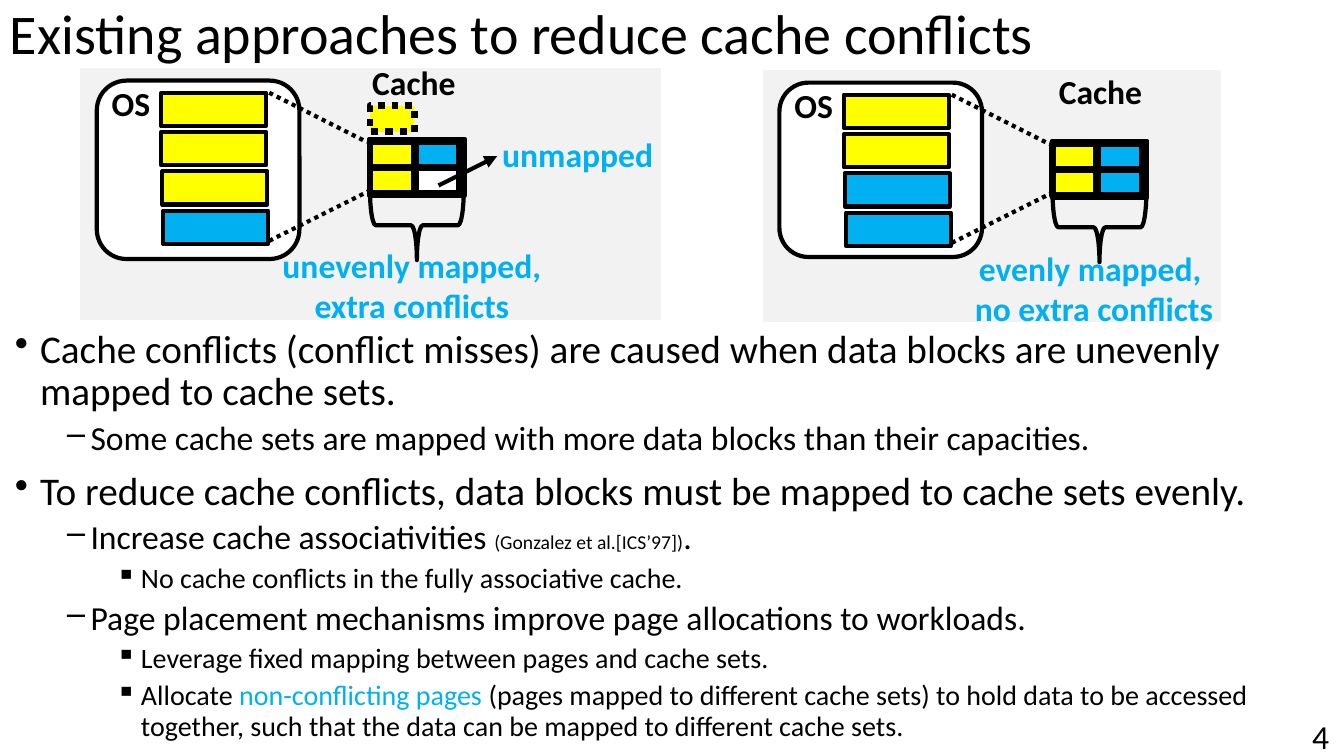
import pptx
import pptx.dml.color
import pptx.enum.dml
import pptx.enum.shapes
import pptx.enum.text
import pptx.oxml
import pptx.oxml.ns
import pptx.util

Inches = pptx.util.Inches
Pt = pptx.util.Pt
Shape = pptx.enum.shapes.MSO_SHAPE
Align = pptx.enum.text.PP_ALIGN
Anchor = pptx.enum.text.MSO_ANCHOR
DOTTED = pptx.enum.dml.MSO_LINE.ROUND_DOT

COLORS = {
    "black": "000000",
    "white": "FFFFFF",
    "panel": "F2F2F2",
    "yellow": "FFFF00",
    "blue": "00B0F0",
}
LABEL = {"size": Pt(24), "bold": True}
LEVELS = [
    {"bullet": "•", "size": 28, "before": 10},
    {"bullet": "‒", "size": 24, "before": 5},
    {"bullet": "▪", "size": 20, "before": 5},
]


class SlideBuilder:
    font_name = "Calibri"

    def __init__(self, slide):
        self.slide = slide

    def color(self, name):
        return pptx.dml.color.RGBColor.from_string(COLORS[name])

    def stroke(self, line, name, width, dash=None):
        line.color.rgb = self.color(name)
        line.width = Pt(width)
        if dash is not None:
            line.dash_style = dash

    def box(self, kind, left, top, width, height, fill=None, line="black",
            weight=3, dash=None, rotation=0):
        shape = self.slide.shapes.add_shape(
            kind, Inches(left), Inches(top), Inches(width), Inches(height))
        shape.shadow.inherit = False
        shape.rotation = rotation
        if fill:
            shape.fill.solid()
            shape.fill.fore_color.rgb = self.color(fill)
        else:
            shape.fill.background()
        self.stroke(shape.line, line, weight, dash)

    def line(self, start, end, dash=None, arrow=False):
        connector = self.slide.shapes.add_connector(
            pptx.enum.shapes.MSO_CONNECTOR.STRAIGHT,
            Inches(start[0]), Inches(start[1]), Inches(end[0]), Inches(end[1]))
        self.stroke(connector.line, "black", 3, dash)
        properties = connector._element.spPr
        if arrow:
            outline = properties.find(pptx.oxml.ns.qn("a:ln"))
            outline.append(pptx.oxml.parse_xml(
                f'<a:tailEnd {pptx.oxml.ns.nsdecls("a")} type="triangle"/>'))
        properties.append(pptx.oxml.parse_xml(
            f'<a:effectLst {pptx.oxml.ns.nsdecls("a")}/>'))

    def frame(self, left, top, width, height, anchor=Anchor.TOP):
        shape = self.slide.shapes.add_textbox(
            Inches(left), Inches(top), Inches(width), Inches(height))
        shape.text_frame.word_wrap = True
        shape.text_frame.vertical_anchor = anchor
        return shape.text_frame

    def paragraph(self, frame, index, paragraph_format):
        paragraph = frame.add_paragraph() if index else frame.paragraphs[0]
        for name, value in paragraph_format.items():
            setattr(paragraph, name, value)
        return paragraph

    def run(self, paragraph, text, font_format, color="black"):
        run = paragraph.add_run()
        run.text = text
        for name, value in {"name": self.font_name, **font_format}.items():
            setattr(run.font, name, value)
        run.font.color.rgb = self.color(color)

    def text(self, left, top, width, height, lines, font_format, color="black",
             anchor=Anchor.TOP, **paragraph_format):
        frame = self.frame(left, top, width, height, anchor)
        for index, text in enumerate(lines):
            paragraph = self.paragraph(frame, index, paragraph_format)
            self.run(paragraph, text, font_format, color)

    def bullets(self, left, top, width, height, items):
        frame = self.frame(left, top, width, height)
        for index, (level, runs) in enumerate(items):
            style = LEVELS[level]
            paragraph = self.paragraph(frame, index, {
                "level": level,
                "line_spacing": 0.9,
                "space_before": Pt(style["before"]),
            })
            properties = paragraph._p.get_or_add_pPr()
            properties.set("marL", str(Inches(0.25 + 0.5 * level)))
            properties.set("indent", str(Inches(-0.25)))
            properties.append(pptx.oxml.parse_xml(
                f'<a:buChar {pptx.oxml.ns.nsdecls("a")} char="{style["bullet"]}"/>'))
            for text, size, color in runs:
                self.run(paragraph, text, {"size": Pt(size or style["size"])}, color)

    def mapping(self, left, top, width, os_height, pages, cells, cache_at,
                caption_at, caption):
        self.box(Shape.RECTANGLE, left, top, width, 2.49, "panel", "panel", 1)
        self.box(Shape.ROUNDED_RECTANGLE, left + 0.16, top + 0.12, 2.01, os_height, "white")
        self.box(Shape.RECTANGLE, left + 2.86, top + 0.7, 0.95, 0.56)
        self.text(*cache_at, 1.07, 0.5, ["Cache"], LABEL, alignment=Align.CENTER)
        self.text(left + 0.21, top + 0.09, 0.74, 0.5, ["OS"], LABEL)
        self.line((left + 1.87, top + 0.24), (left + 2.84, top + 0.73), DOTTED)
        self.line((left + 1.87, top + 1.71), (left + 2.87, top + 1.21), DOTTED)
        for row, fill in enumerate(pages):
            self.box(Shape.RECTANGLE, left + 0.8 + max(0, row - 1) * 0.01,
                     top + 0.24 + row * 0.39, 1.04, 0.33, fill)
        for index, fill in enumerate(cells):
            column, row = divmod(index, 2)
            self.box(Shape.RECTANGLE, left + 2.87 + column * 0.45,
                     top + 0.72 + row * 0.26, 0.44, 0.26, fill, weight=5)
        self.box(Shape.LEFT_BRACE, left + 2.99, top + 1.09, 0.69, 0.93, rotation=270)
        self.text(*caption_at, 0.91, caption, LABEL, "blue", alignment=Align.CENTER)


def main():
    presentation = pptx.Presentation()
    presentation.slide_width = Inches(13.33)
    presentation.slide_height = Inches(7.5)
    builder = SlideBuilder(presentation.slides.add_slide(presentation.slide_layouts[6]))

    builder.text(12.85, 7.1, 0.43, 0.4, ["4"], {"size": Pt(24)},
                 anchor=Anchor.MIDDLE, alignment=Align.RIGHT)
    builder.bullets(0.05, 3.22, 13.23, 4.28, [
        (0, [("Cache conflicts (conflict misses) are caused when data blocks are "
              "unevenly mapped to cache sets.", None, "black")]),
        (1, [("Some cache sets are mapped with more data blocks than their "
              "capacities.", None, "black")]),
        (0, [("To reduce cache conflicts, data blocks must be mapped to cache "
              "sets evenly.", None, "black")]),
        (1, [("Increase cache associativities ", None, "black"),
             ("(Gonzalez et al.[ICS’97])", 14, "black"),
             (".", None, "black")]),
        (2, [("No cache conflicts in the fully associative cache.", None, "black")]),
        (1, [("Page placement mechanisms improve page allocations to workloads.",
              None, "black")]),
        (2, [("Leverage fixed mapping between pages and cache sets.", None, "black")]),
        (2, [("Allocate ", None, "black"),
             ("non-conflicting pages ", None, "blue"),
             ("(pages mapped to different cache sets) to hold data to be accessed "
              "together, such that the data can be mapped to different cache sets.",
              None, "black")]),
    ])
    builder.mapping(7.57, 0.7, 4.53, 1.73, ["yellow"] * 2 + ["blue"] * 2,
                    ["yellow", "yellow", "blue", "blue"], (10.38, 0.65),
                    (9.56, 2.41, 2.58), ["evenly mapped, ", "no extra conflicts"])
    builder.text(0, 0.14, 13.28, 0.44, ["Existing approaches to reduce cache conflicts"],
                 {"size": Pt(40)}, anchor=Anchor.MIDDLE, line_spacing=0.9)
    builder.mapping(0.8, 0.68, 5.75, 1.77, ["yellow"] * 3 + ["blue"],
                    ["yellow", "yellow", "blue", "white"], (3.57, 0.57),
                    (2.67, 2.38, 2.83), ["unevenly mapped, ", "extra conflicts"])
    builder.line((4.35, 1.84), (4.93, 1.55), arrow=True)
    builder.text(4.55, 1.28, 2.36, 0.5, ["unmapped"], LABEL, "blue", alignment=Align.CENTER)
    builder.box(Shape.RECTANGLE, 3.67, 1.05, 0.44, 0.26, "yellow", weight=5, dash=DOTTED)

    presentation.save("out.pptx")


if __name__ == "__main__":
    main()
